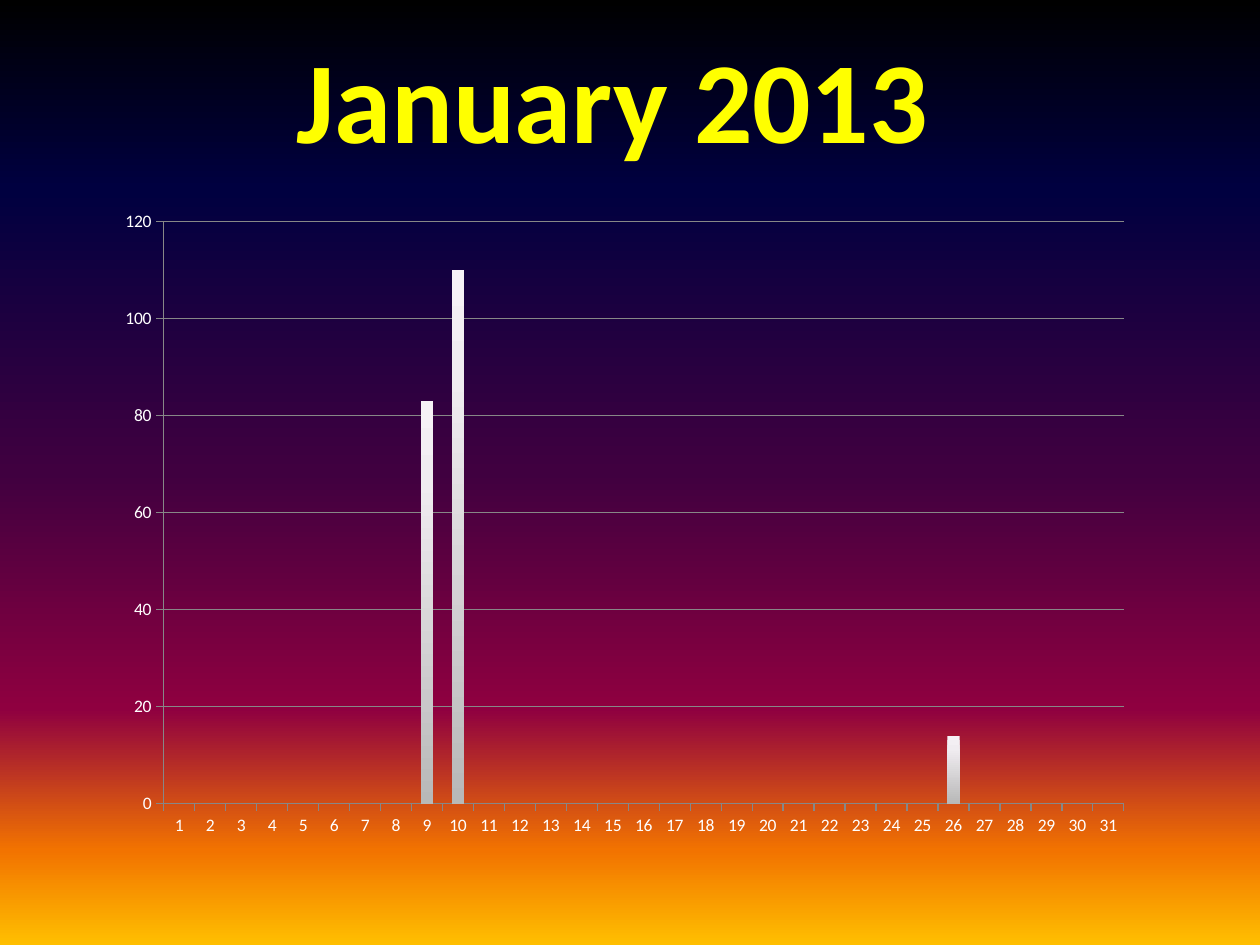
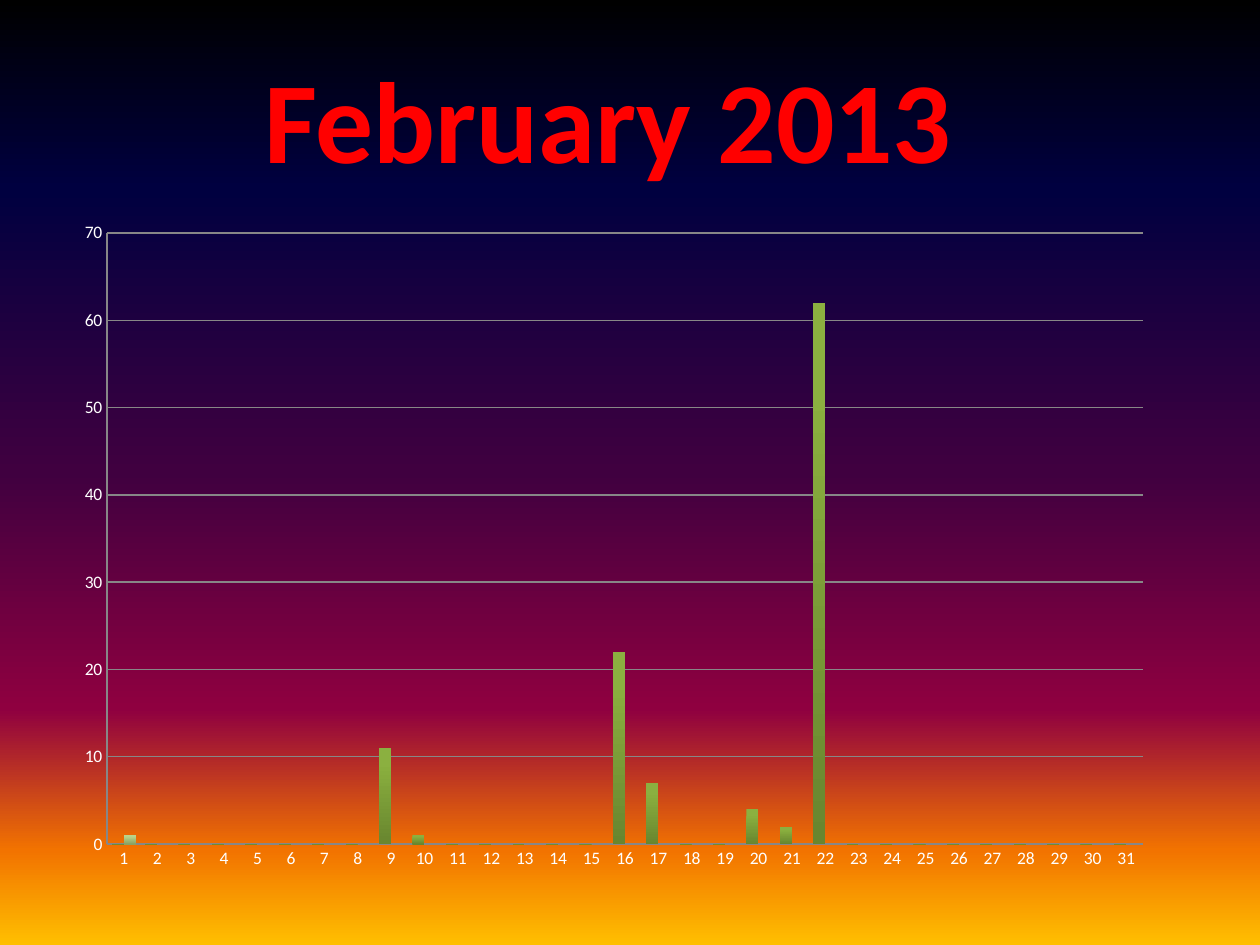
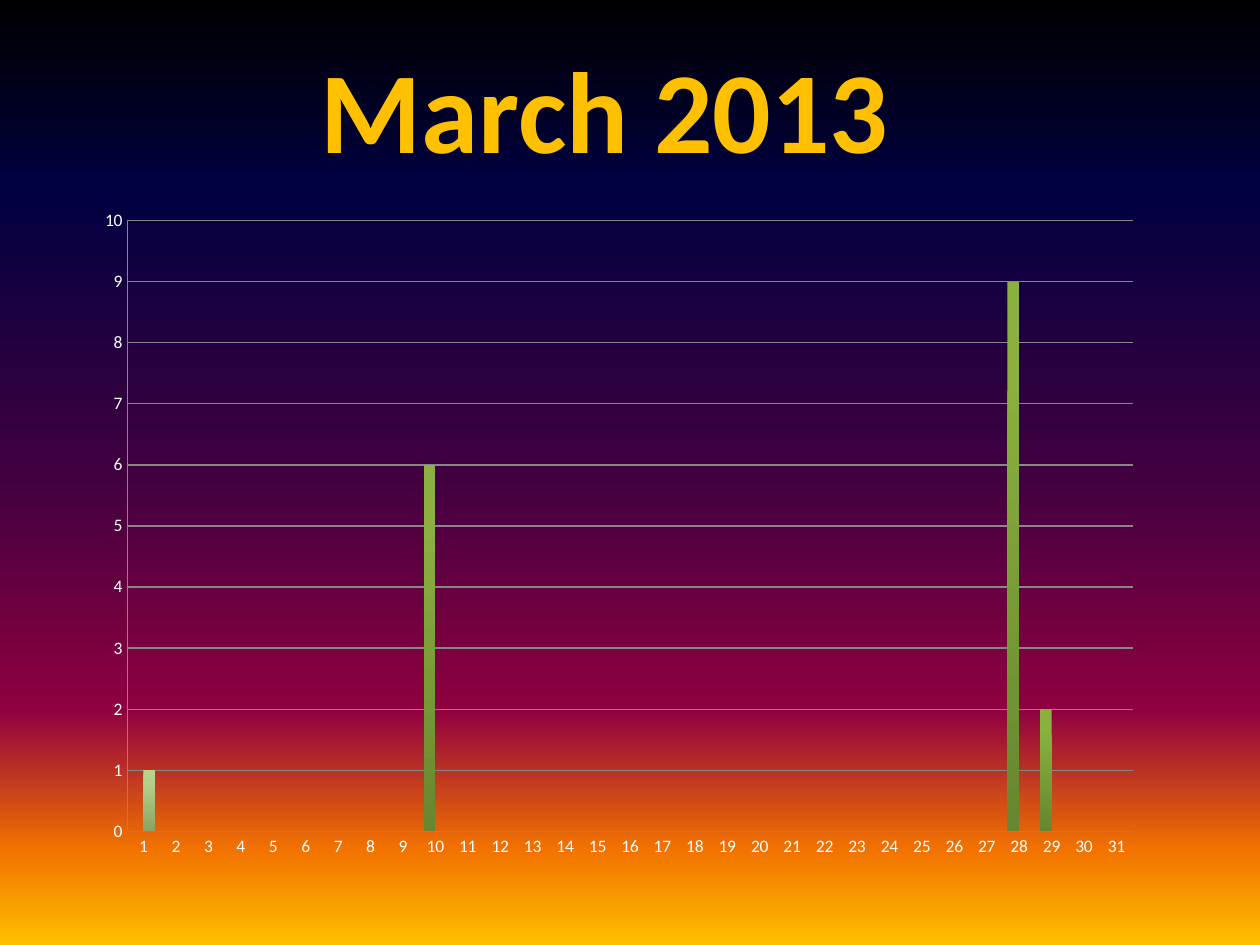
import pptx
import pptx.chart.data
import pptx.dml.color
import pptx.enum.chart
import pptx.enum.text
import pptx.oxml
import pptx.oxml.ns
import pptx.util
from lxml import etree

qn = pptx.oxml.ns.qn
Inches, Pt = pptx.util.Inches, pptx.util.Pt
Tick = pptx.enum.chart.XL_TICK_MARK

FONT = "Calibri"
COLORS = {"white": "FFFFFF", "grid": "878787",
          "yellow": "FFFF00", "red": "FF0000", "amber": "FFC000"}
SUNSET = [(0, "000000"), (20, "000040"), (50, "400040"),
          (75, "8F0040"), (90, "F27300"), (100, "FFBF00")]
SILVER = [(0, "F6F2F6"), (20, "F0ECF0"), (100, "B8B8B8")]
GREEN = [(0, "8BB040"), (20, "89AE3E"), (100, "68862F")]
PALE_GREEN = [(0, "BBD48C"), (20, "B6CF88"), (100, "8BA263")]
DAYS = range(1, 32)

# Boxes are left, top, width, height in inches; a plot box is relative to its chart.
MONTHS = [
    {"title": "January 2013", "color": "yellow", "title_box": (2.22, 0.17, 5.28, 1.21),
     "centred": True, "chart_box": (0.83, 1.58, 8.25, 5.17),
     "plot_box": (0.47, 0.18, 7.62, 4.62), "gap": 150, "tick": Tick.OUTSIDE,
     "top": 120, "step": 20,
     "series": [({9: 83, 10: 110, 26: 14}, SILVER)]},
    {"title": "February 2013", "color": "red", "title_box": (2, 0.33, 6.08, 1.21),
     "centred": False, "chart_box": (0.5, 1.67, 8.75, 5.33),
     "plot_box": (0.35, 0.18, 8.22, 4.85), "gap": 75, "tick": Tick.NONE,
     "top": 70, "step": 10,
     "series": [({9: 11, 10: 1, 16: 22, 17: 7, 20: 4, 21: 2, 22: 62}, GREEN),
                ({1: 1}, PALE_GREEN)]},
    {"title": "March 2013", "color": "amber", "title_box": (2.42, 0.25, 4.76, 1.21),
     "centred": True, "chart_box": (0.79, 1.58, 8.42, 5.33),
     "plot_box": (0.22, 0.17, 7.98, 4.85), "gap": 75, "tick": Tick.NONE,
     "top": 10, "step": 1,
     "series": [({10: 6, 28: 9, 29: 2}, GREEN), ({1: 1}, PALE_GREEN)]},
]


def rgb(name):
    return pptx.dml.color.RGBColor.from_string(COLORS[name])


def fill_downwards(fill, element, stops):
    """Fill with a top-to-bottom gradient of (percent, hex) stops."""
    fill.gradient()
    fill.gradient_angle = 270
    gs_list = next(element.iter(qn("a:gsLst")))
    for gs in list(gs_list):
        gs_list.remove(gs)
    for percent, color in stops:
        gs = etree.SubElement(gs_list, qn("a:gs"), pos=str(percent * 1000))
        etree.SubElement(gs, qn("a:srgbClr"), val=color)


def outline_text(run, color, width):
    ln = etree.Element(qn("a:ln"), w=str(int(Pt(width))))
    fill = etree.SubElement(ln, qn("a:solidFill"))
    etree.SubElement(fill, qn("a:srgbClr"), val=COLORS[color])
    run.font._element.insert(0, ln)


def add_title(s, box, text, color, centred):
    tf = s.shapes.add_textbox(*map(Inches, box)).text_frame
    tf.word_wrap = not centred
    tf.auto_size = pptx.enum.text.MSO_AUTO_SIZE.SHAPE_TO_FIT_TEXT
    p = tf.paragraphs[0]
    if centred:
        p.alignment = pptx.enum.text.PP_ALIGN.CENTER
    r = p.add_run()
    r.text = text
    r.font.name, r.font.size, r.font.bold = FONT, Pt(66), True
    r.font.color.rgb = rgb(color)
    outline_text(r, "white", 1.4)


def place_plot(chart, chart_box, plot_box):
    """Fix the inner plot area, given in inches relative to the chart."""
    area = chart._chartSpace.chart.plotArea
    for old in area.findall(qn("c:layout")):
        area.remove(old)
    layout = etree.Element(qn("c:layout"))
    manual = etree.SubElement(layout, qn("c:manualLayout"))
    sizes = chart_box[2:] * 2
    shares = [(k, length / size) for k, length, size in zip("xywh", plot_box, sizes)]
    settings = [("layoutTarget", "inner"), ("xMode", "edge"), ("yMode", "edge"), *shares]
    for tag, val in settings:
        etree.SubElement(manual, qn("c:" + tag), val=str(val))
    area.insert(0, layout)


def style_axis(axis, tick):
    axis.major_tick_mark, axis.minor_tick_mark = tick, Tick.NONE
    axis.format.line.color.rgb = rgb("grid")
    axis.format.line.width = Pt(0.75)


def add_daily_chart(s, month):
    data = pptx.chart.data.CategoryChartData()
    data.categories = [str(day) for day in DAYS]
    for number, (counts, _) in enumerate(month["series"], 1):
        # The second series has a value on the first day only.
        days = DAYS if number == 1 else counts
        data.add_series(f"Series {number}", [counts.get(day, 0) for day in days])
    box = month["chart_box"]
    chart = s.shapes.add_chart(pptx.enum.chart.XL_CHART_TYPE.COLUMN_CLUSTERED,
                               *map(Inches, box), data).chart
    chart.has_legend = chart.has_title = False
    chart.font.name, chart.font.size = FONT, Pt(10)
    chart.font.color.rgb = rgb("white")
    place_plot(chart, box, month["plot_box"])

    for axis in (chart.category_axis, chart.value_axis):
        style_axis(axis, month["tick"])
    values = chart.value_axis
    values.minimum_scale, values.maximum_scale = 0, month["top"]
    values.major_unit = month["step"]
    values.has_major_gridlines = True
    line = values.major_gridlines.format.line
    line.color.rgb, line.width = rgb("grid"), Pt(0.75)

    plot = chart.plots[0]
    plot.gap_width, plot.overlap, plot.vary_by_categories = month["gap"], 0, False
    for series, (_, stops) in zip(plot.series, month["series"]):
        series.invert_if_negative = False
        fill_downwards(series.format.fill, series._element, stops)


def add_month_slide(prs, month):
    s = prs.slides.add_slide(prs.slide_layouts[6])
    fill_downwards(s.background.fill, s._element, SUNSET)
    add_title(s, month["title_box"], month["title"], month["color"], month["centred"])
    add_daily_chart(s, month)


def main():
    prs = pptx.Presentation()
    prs.slide_width, prs.slide_height = Inches(10), Inches(7.5)
    for month in MONTHS:
        add_month_slide(prs, month)
    prs.save("out.pptx")


if __name__ == "__main__":
    main()
